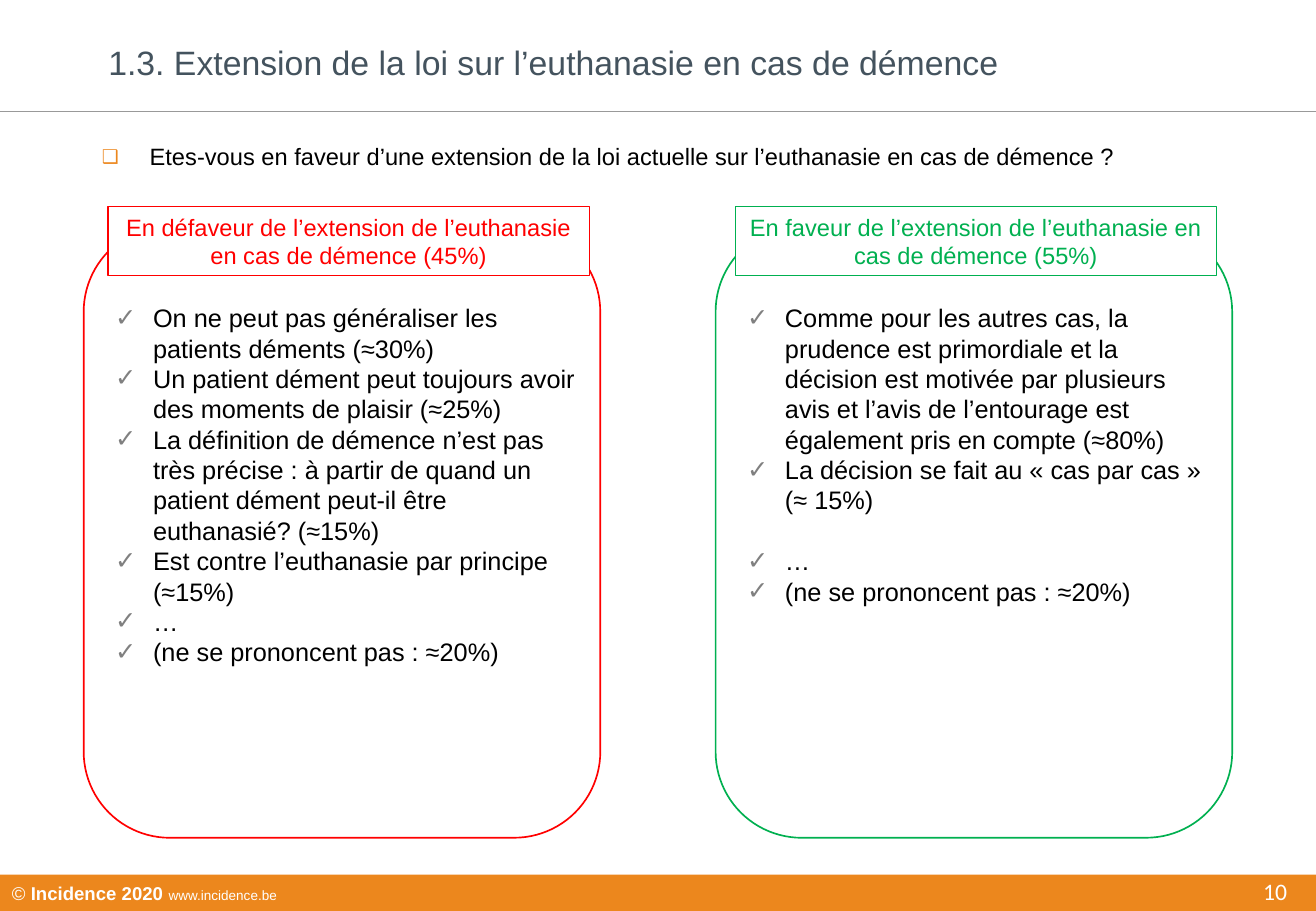
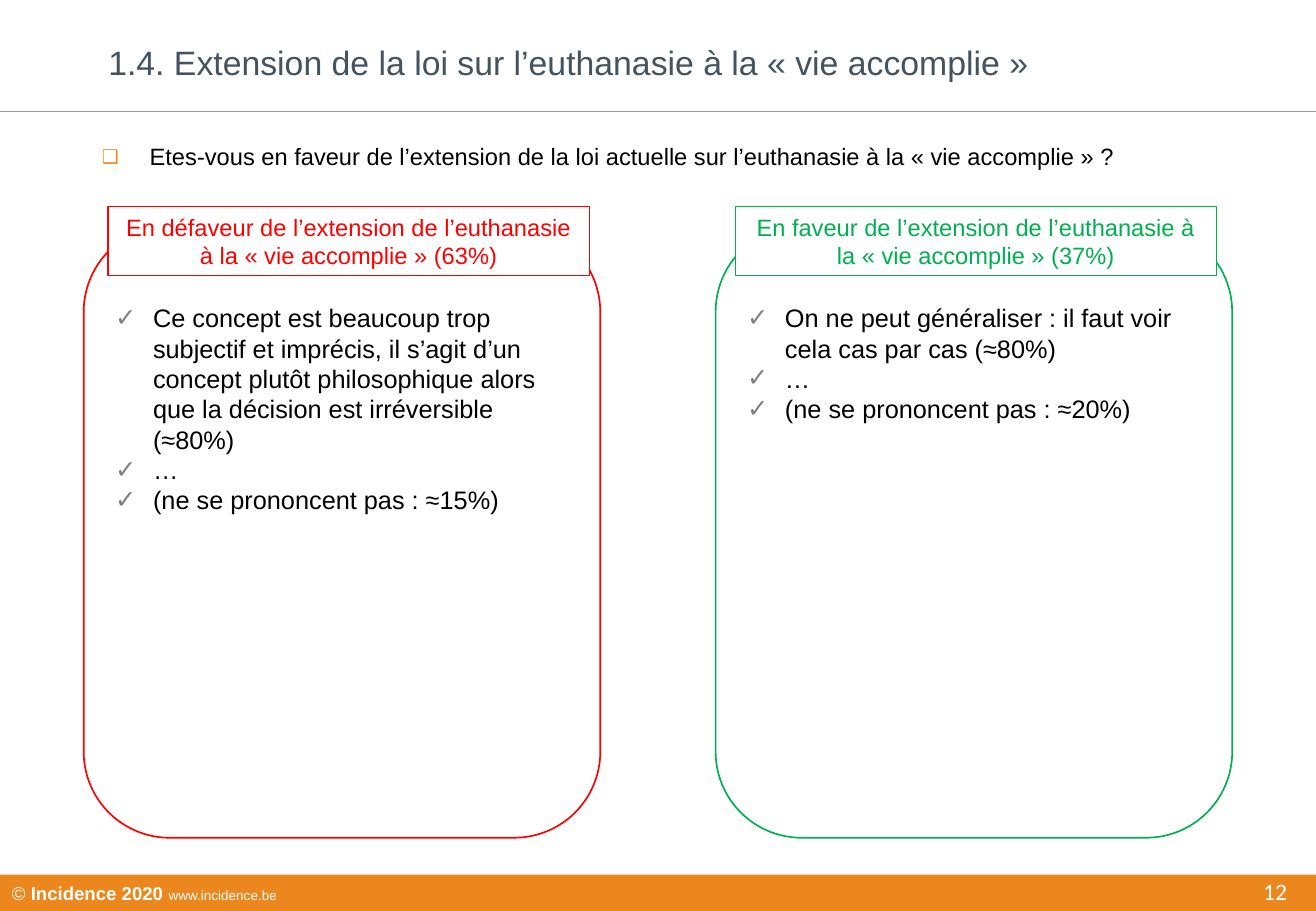
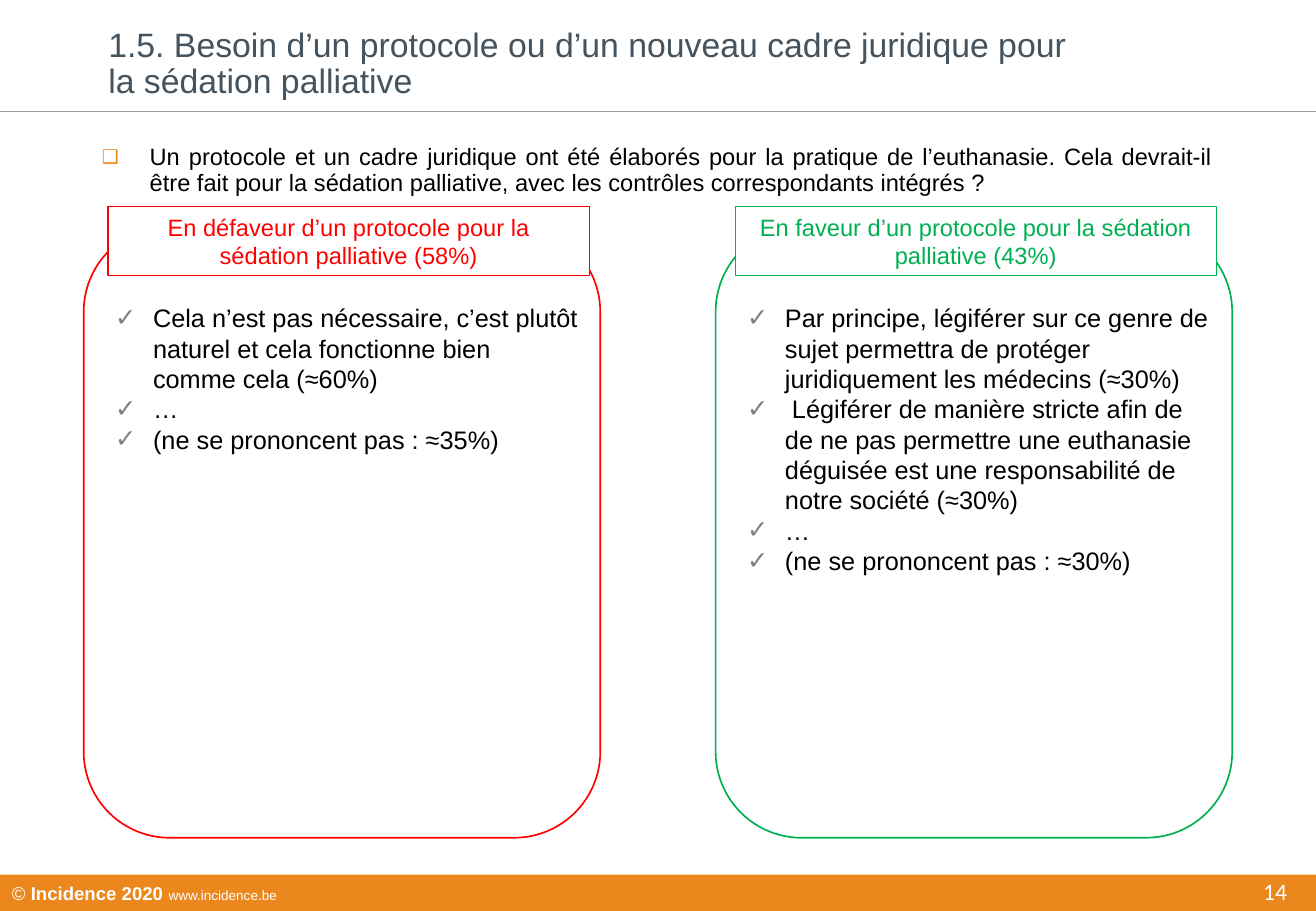
"""Builds three slides that set the arguments against and for each proposal side by side."""
from dataclasses import dataclass

from lxml import etree
from pptx import Presentation
from pptx.dml.color import RGBColor
from pptx.enum.shapes import MSO_CONNECTOR, MSO_SHAPE
from pptx.enum.text import MSO_ANCHOR, MSO_AUTO_SIZE, PP_ALIGN
from pptx.oxml.ns import qn
from pptx.util import Cm, Pt

RECT, ROUND = MSO_SHAPE.RECTANGLE, MSO_SHAPE.ROUNDED_RECTANGLE
STRAIGHT = MSO_CONNECTOR.STRAIGHT
TOP, MIDDLE, BOTTOM = MSO_ANCHOR.TOP, MSO_ANCHOR.MIDDLE, MSO_ANCHOR.BOTTOM
LEFT, CENTER, RIGHT = PP_ALIGN.LEFT, PP_ALIGN.CENTER, PP_ALIGN.RIGHT
JUSTIFY = PP_ALIGN.JUSTIFY
FIXED = MSO_AUTO_SIZE.NONE

COLORS = {
    "band": "EC871D", "rule": "999999", "title": "44535E", "text": "000000",
    "white": "FFFFFF", "tick": "808080", "against": "FF0000", "for": "00B050",
}
WIDTH, HEIGHT = 27.51, 19.05
BAND = 0.76


@dataclass(frozen=True)
class Box:
    left: float
    top: float
    width: float
    height: float

    def cm(self) -> tuple:
        return Cm(self.left), Cm(self.top), Cm(self.width), Cm(self.height)


@dataclass(frozen=True)
class Style:
    size: float
    color: str
    font: str = "Arial"
    bold: bool = False


@dataclass(frozen=True)
class Bullet:
    char: str
    color: str
    indent: float
    scale: int = 100


@dataclass(frozen=True)
class Column:
    color: str
    left: float
    tag: float


@dataclass(frozen=True)
class Item:
    text: str
    gap: float = 0


@dataclass(frozen=True)
class Side:
    head: str
    items: tuple[Item, ...]


@dataclass(frozen=True)
class Page:
    number: int
    title: str
    question: str
    sides: tuple[Side, Side]


TITLE = Style(20, "title")
QUERY = Style(14, "text")
POINT = Style(15, "text")
FOLIO = Style(14, "white", "Calibri")
SQUARE = Bullet("❑", "band", 1, 80)
TICK = Bullet("✓", "tick", 0.79)
COLUMNS = (Column("against", 1.75, 2.26), Column("for", 14.96, 15.37))
DOTS = Item("…")

PAGES = (
    Page(
        10,
        "1.3. Extension de la loi sur l’euthanasie en cas de démence",
        "Etes-vous en faveur d’une extension de la loi actuelle sur l’euthanasie en cas de démence ?",
        (
            Side("En défaveur de l’extension de l’euthanasie en cas de démence (45%)", (
                Item("On ne peut pas généraliser les patients déments (≈30%)"),
                Item("Un patient dément peut toujours avoir des moments de plaisir (≈25%)"),
                Item("La définition de démence n’est pas très précise : à partir de quand un "
                     "patient dément peut-il être euthanasié? (≈15%)"),
                Item("Est contre l’euthanasie par principe (≈15%)"),
                DOTS,
                Item("(ne se prononcent pas : ≈20%)"),
            )),
            Side("En faveur de l’extension de l’euthanasie en cas de démence (55%)", (
                Item("Comme pour les autres cas, la prudence est primordiale et la décision "
                     "est motivée par plusieurs avis et l’avis de l’entourage est également "
                     "pris en compte (≈80%)"),
                Item("La décision se fait au « cas par cas » (≈ 15%)"),
                Item("…", 18),
                Item("(ne se prononcent pas : ≈20%)"),
            )),
        ),
    ),
    Page(
        12,
        "1.4. Extension de la loi sur l’euthanasie à la « vie accomplie »",
        "Etes-vous en faveur de l’extension de la loi actuelle sur l’euthanasie à la « vie accomplie » ?",
        (
            Side("En défaveur de l’extension de l’euthanasie à la « vie accomplie » (63%)", (
                Item("Ce concept est beaucoup trop subjectif et imprécis, il s’agit d’un "
                     "concept plutôt philosophique alors que la décision est irréversible (≈80%)"),
                DOTS,
                Item("(ne se prononcent pas : ≈15%)"),
            )),
            Side("En faveur de l’extension de l’euthanasie à la « vie accomplie » (37%)", (
                Item("On ne peut généraliser : il faut voir cela cas par cas (≈80%)"),
                DOTS,
                Item("(ne se prononcent pas : ≈20%)"),
            )),
        ),
    ),
    Page(
        14,
        "1.5. Besoin d’un protocole ou d’un nouveau cadre juridique pour la sédation palliative",
        "Un protocole et un cadre juridique ont été élaborés pour la pratique de l’euthanasie. "
        "Cela devrait-il être fait pour la sédation palliative, avec les contrôles "
        "correspondants intégrés ?",
        (
            Side("En défaveur d’un protocole pour la sédation palliative (58%)", (
                Item("Cela n’est pas nécessaire, c’est plutôt naturel et cela fonctionne bien "
                     "comme cela (≈60%)"),
                DOTS,
                Item("(ne se prononcent pas : ≈35%)"),
            )),
            Side("En faveur d’un protocole pour la sédation palliative (43%)", (
                Item("Par principe, légiférer sur ce genre de sujet permettra de protéger "
                     "juridiquement les médecins (≈30%)"),
                Item(" Légiférer de manière stricte afin de de ne pas permettre une euthanasie "
                     "déguisée est une responsabilité de notre société (≈30%)"),
                DOTS,
                Item("(ne se prononcent pas : ≈30%)"),
            )),
        ),
    ),
)


def paint(name: str) -> RGBColor:
    return RGBColor.from_string(COLORS[name])


def write(para, text: str, style: Style) -> None:
    run = para.add_run()
    run.text = text
    font = run.font
    font.name, font.size, font.bold = style.font, Pt(style.size), style.bold
    font.color.rgb = paint(style.color)


def mark(para, bullet: Bullet) -> None:
    props = para._p.get_or_add_pPr()
    props.set("marL", str(Cm(bullet.indent)))
    props.set("indent", str(-Cm(bullet.indent)))
    color = etree.SubElement(props, qn("a:buClr"))
    etree.SubElement(color, qn("a:srgbClr"), val=COLORS[bullet.color])
    etree.SubElement(props, qn("a:buSzPct"), val=str(bullet.scale * 1000))
    etree.SubElement(props, qn("a:buFont"), typeface="Arial")
    etree.SubElement(props, qn("a:buChar"), char=bullet.char)


def setup(frame, anchor, align):
    frame.word_wrap = True
    frame.auto_size = FIXED
    frame.vertical_anchor = anchor
    para = frame.paragraphs[0]
    para.alignment = align
    return para


def add_box(slide, kind, box: Box, fill: str = "", line: str = "", weight: float = 1):
    shape = slide.shapes.add_shape(kind, *box.cm())
    shape.shadow.inherit = False
    if fill:
        shape.fill.solid()
        shape.fill.fore_color.rgb = paint(fill)
    else:
        shape.fill.background()
    if line:
        shape.line.color.rgb = paint(line)
        shape.line.width = Pt(weight)
    else:
        shape.line.fill.background()
    return shape


def add_text(slide, box: Box, anchor=TOP, align=LEFT):
    frame = slide.shapes.add_textbox(*box.cm()).text_frame
    return frame, setup(frame, anchor, align)


def add_frame(slide, layout) -> None:
    band = add_box(slide, RECT, Box(0, HEIGHT - BAND, WIDTH, BAND), "band")
    para = setup(band.text_frame, MIDDLE, LEFT)
    write(para, "© ", Style(11, "white"))
    write(para, "Incidence 2020 ", Style(11, "white", bold=True))
    write(para, "www.incidence.be", Style(8, "white"))
    rule = slide.shapes.add_connector(STRAIGHT, 0, Cm(2.33), Cm(WIDTH), Cm(2.33))
    rule.line.color.rgb = paint("rule")
    rule.line.width = Pt(0.5)
    etree.SubElement(rule.element.spPr, qn("a:effectLst"))
    for index, shape in enumerate((band, rule)):
        shape.element.xpath(".//p:cNvPr")[0].set("id", str(100 + index))
        layout.shapes.element.append(shape.element)


def add_title(slide, text: str) -> None:
    title = slide.shapes.title
    title.left, title.top, title.width, title.height = Box(2.01, 0.38, 20.7, 1.93).cm()
    para = setup(title.text_frame, MIDDLE, LEFT)
    para.line_spacing = 0.9
    write(para, text, TITLE)


def add_query(slide, text: str) -> None:
    para = add_text(slide, Box(1.88, 2.92, 23.72, 1.35), align=JUSTIFY)[1]
    mark(para, SQUARE)
    para.line_spacing = 0.9
    write(para, text, QUERY)


def add_side(slide, col: Column, side: Side) -> None:
    add_box(slide, ROUND, Box(col.left, 4.72, 10.8, 12.8), line=col.color)
    tag = add_box(slide, RECT, Box(col.tag, 4.32, 10.06, 1.45), "white", col.color, 0.75)
    write(setup(tag.text_frame, TOP, CENTER), side.head, Style(14, col.color))
    frame, para = add_text(slide, Box(col.left + 0.41, 6.2, 10.21, 8))
    for index, item in enumerate(side.items):
        if index:
            para = frame.add_paragraph()
        mark(para, TICK)
        if item.gap:
            para.space_before = Pt(item.gap)
        write(para, item.text, POINT)


def add_page(deck, layout, page: Page) -> None:
    slide = deck.slides.add_slide(layout)
    if page is PAGES[0]:
        add_frame(slide, layout)
    add_title(slide, page.title)
    add_query(slide, page.question)
    for col, side in zip(COLUMNS, page.sides):
        add_side(slide, col, side)
    para = add_text(slide, Box(21.34, 18.03, 5.82, 1.02), BOTTOM, RIGHT)[1]
    write(para, str(page.number), FOLIO)


def main() -> None:
    deck = Presentation()
    deck.slide_width, deck.slide_height = Cm(WIDTH), Cm(HEIGHT)
    layout = deck.slide_layouts[5]
    for page in PAGES:
        add_page(deck, layout, page)
    deck.save("out.pptx")


if __name__ == "__main__":
    main()
